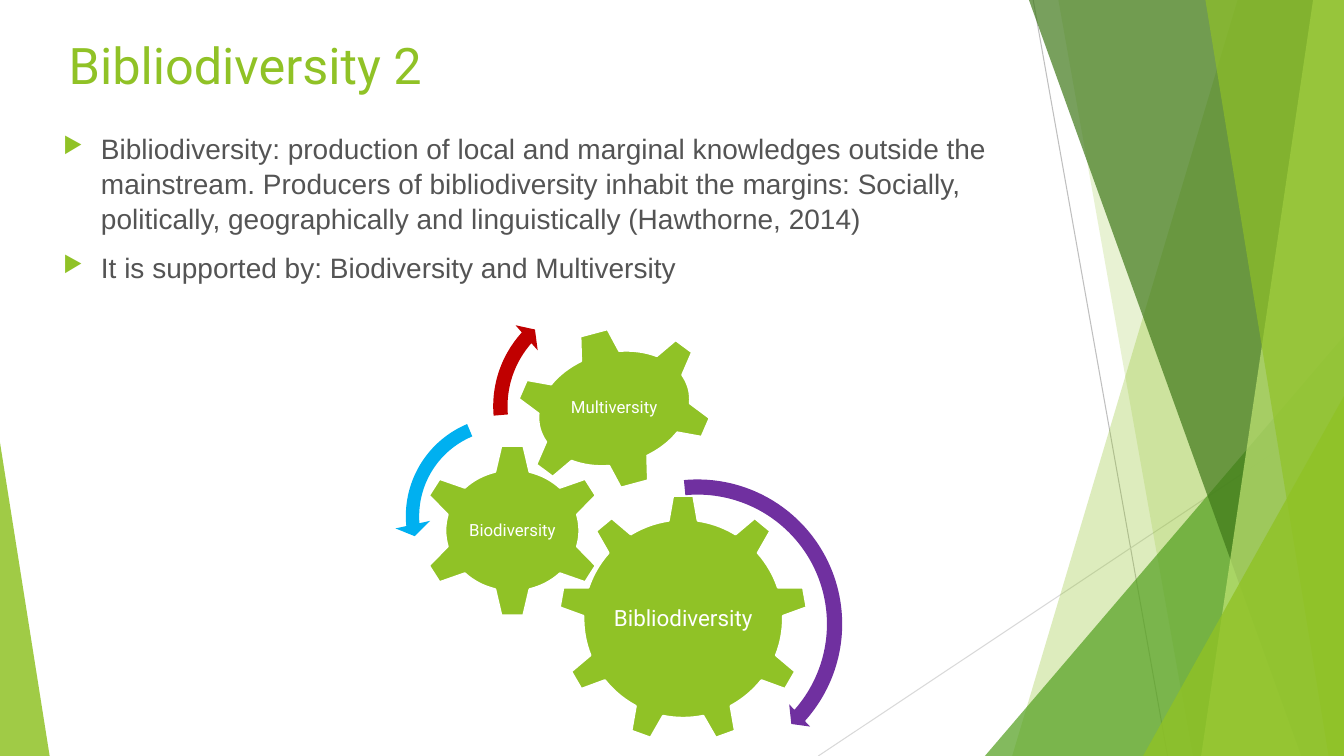
from collections import namedtuple
from dataclasses import dataclass

from lxml import etree
from pptx import Presentation
from pptx.dml.color import RGBColor
from pptx.enum.shapes import MSO_CONNECTOR, MSO_SHAPE
from pptx.enum.text import MSO_ANCHOR, PP_ALIGN
from pptx.oxml.ns import qn
from pptx.util import Pt

STRAIGHT = MSO_CONNECTOR.STRAIGHT
TRIANGLE = MSO_SHAPE.ISOSCELES_TRIANGLE
GEAR_SIX, GEAR_NINE = MSO_SHAPE.GEAR_6, MSO_SHAPE.GEAR_9
ARC, LEFT_ARC = MSO_SHAPE.CIRCULAR_ARROW, MSO_SHAPE.LEFT_CIRCULAR_ARROW
TOP, MIDDLE = MSO_ANCHOR.TOP, MSO_ANCHOR.MIDDLE
LEFT, CENTER = PP_ALIGN.LEFT, PP_ALIGN.CENTER

Box = namedtuple("Box", "left top width height")


@dataclass(frozen=True)
class Theme:
    """Colours, fonts and type sizes of the deck."""
    lime: str = "90C226"
    green: str = "54A021"
    forest: str = "3F7819"
    pale: str = "C0E474"
    white: str = "FFFFFF"
    body: str = "545454"
    dark_rule: str = "BFBFBF"
    light_rule: str = "D9D9D9"
    purple: str = "7030A0"
    blue: str = "00B0F0"
    red: str = "C00000"
    heading_font: str = "Roboto"
    body_font: str = "Arial"
    title_size: int = 36
    body_size: int = 20
    large_label: int = 16
    small_label: int = 12


THEME = Theme()


def points(*lengths):
    """Turn numbers of points into lengths."""
    return [Pt(length) for length in lengths]


def paint(shape, color, opacity=100, outline=None):
    """Give a shape a flat fill, an optional outline and no shadow."""
    shape.shadow.inherit = False
    shape.fill.solid()
    shape.fill.fore_color.rgb = RGBColor.from_string(color)
    if opacity < 100:
        tint = shape.fill._xPr.find(qn("a:solidFill"))[0]
        etree.SubElement(tint, qn("a:alpha")).set("val", str(opacity * 1000))
    if outline:
        shape.line.color.rgb = RGBColor.from_string(outline)
        shape.line.width = Pt(1.5)
    else:
        shape.line.fill.background()


def add_preset(page, kind, box, adjustments=(), **look):
    """Place a painted preset shape."""
    shape = page.shapes.add_shape(kind, *points(*box))
    for index, value in enumerate(adjustments):
        shape.adjustments[index] = value
    paint(shape, **look)
    return shape


def add_bullet(para, color, indent):
    """Give a paragraph a triangular bullet and a hanging indent."""
    properties = para._p.get_or_add_pPr()
    properties.set("marL", str(Pt(indent)))
    properties.set("indent", str(-Pt(indent)))
    tint = etree.SubElement(properties, qn("a:buClr"))
    etree.SubElement(tint, qn("a:srgbClr")).set("val", color)
    etree.SubElement(properties, qn("a:buSzPct")).set("val", "80000")
    etree.SubElement(properties, qn("a:buChar")).set("char", "▶")


def add_text(page, box, text, *, font, size, color, align=LEFT, anchor=TOP,
             insets=(7.2, 3.6), spacing=1.0, before=0, bullet=None):
    """Place text, one paragraph to a line, in a wrapping box."""
    frame = page.shapes.add_textbox(*points(*box)).text_frame
    frame.word_wrap = True
    frame.vertical_anchor = anchor
    frame.margin_left = frame.margin_right = Pt(insets[0])
    frame.margin_top = frame.margin_bottom = Pt(insets[1])
    for index, line in enumerate(text.split("\n")):
        para = frame.add_paragraph() if index else frame.paragraphs[0]
        para.alignment = align
        para.line_spacing = spacing
        para.space_before = Pt(before)
        if bullet:
            add_bullet(para, bullet, 27)
        span = para.add_run()
        span.text = line
        span.font.name = font
        span.font.size = Pt(size)
        span.font.color.rgb = RGBColor.from_string(color)


def add_rule(page, start, end, color):
    """Draw a thin straight line without a shadow."""
    rule = page.shapes.add_connector(STRAIGHT, *points(*start, *end))
    rule.line.color.rgb = RGBColor.from_string(color)
    rule.line.width = Pt(0.75)
    etree.SubElement(rule._element.spPr, qn("a:effectLst"))


def add_facet(page, box, top_x, bottom_x, color, opacity):
    """Fill from a slanted left edge to the right side of the box."""
    right, bottom = box.left + box.width, box.top + box.height
    corners = [(box.left + top_x, box.top), (right, box.top),
               (right, bottom), (box.left + bottom_x, bottom)]
    corners = [tuple(points(*corner)) for corner in corners]
    builder = page.shapes.build_freeform(*corners[0])
    builder.add_line_segments(corners[1:], close=True)
    paint(builder.convert_to_shape(), color, opacity)


def add_corner(page, box, width, height, color, opacity, at_right=True):
    """Set a right triangle in a lower corner of the box."""
    left = box.left + (box.width - width if at_right else 0)
    corner = Box(left, box.top + box.height - height, width, height)
    add_preset(page, TRIANGLE, corner, [int(at_right)], color=color, opacity=opacity)


def add_backdrop(page, box):
    """Draw the layered green facets at the edges of the page."""
    right, bottom = box.left + box.width, box.top + box.height
    add_rule(page, (box.left + 738, box.top), (box.left + 834, bottom), THEME.dark_rule)
    add_rule(page, (right, box.top + 290), (box.left + 584.5, bottom), THEME.light_rule)
    add_facet(page, box, 884, 723, THEME.lime, 30)
    add_facet(page, box, 756, 852, THEME.lime, 20)
    add_corner(page, box, 256.5, 300, THEME.green, 72)
    add_facet(page, box, 735, 929.5, THEME.forest, 70)
    add_facet(page, box, 938, 858, THEME.pale, 70)
    add_facet(page, box, 861, 949, THEME.lime, 65)
    add_corner(page, box, 143.5, 257, THEME.lime, 80)
    add_corner(page, box, 35.5, 224, THEME.lime, 85, at_right=False)


def add_copy(page, box):
    """Write the title and the bulleted statements."""
    add_text(page, (box.left + 4, box.top, 662.5, 60.5), "Bibliodiversity 2",
             font=THEME.heading_font, size=THEME.title_size, color=THEME.lime)
    statements = (
        "Bibliodiversity: production of local and marginal knowledges outside the "
        "mainstream. Producers of bibliodiversity inhabit the margins: Socially, "
        "politically, geographically and linguistically (Hawthorne, 2014)\n"
        "It is supported by: Biodiversity and Multiversity")
    add_text(page, (box.left, box.top + 68.5, box.width, box.height - 68.5), statements,
             font=THEME.body_font, size=THEME.body_size, color=THEME.body,
             spacing=1.04, before=10, bullet=THEME.lime)


def add_gear(page, kind, box, label, size, label_width, rotation=0):
    """Place a gear with a level label across its centre."""
    gear = add_preset(page, kind, box, color=THEME.lime, outline=THEME.white)
    gear.rotation = rotation
    label_box = Box(box.left + (box.width - label_width) / 2, box.top + box.height / 4,
                    label_width, box.height / 2)
    add_text(page, label_box, label, font=THEME.heading_font, size=size,
             color=THEME.white, align=CENTER, anchor=MIDDLE, insets=(1.5, 1.5), spacing=0.9)


def add_gear_train(page, box):
    """Draw three meshing gears and the arrows of their turning."""
    gears = [
        (GEAR_NINE, (119, 148.5, 178, 177), "Bibliodiversity", THEME.large_label, 106.5, 0),
        (GEAR_SIX, (19.5, 112, 133, 124), "Biodiversity", THEME.small_label, 68.5, 0),
        (GEAR_SIX, (86.5, 29.5, 144.5, 114.5), "Multiversity", THEME.small_label, 78, 345),
    ]
    for kind, (left, top, width, height), *label in gears:
        add_gear(page, kind, Box(box.left + left, box.top + top, width, height), *label)
    arrows = [
        (ARC, 109.5, 132, 217.5, (0.05, 2.99, 25.1, 158.76, 0.05), THEME.purple),
        (LEFT_ARC, 2, 84.5, 158.5, (0.06, 4.3, 104.89, 148.38, 0.08), THEME.blue),
        (ARC, 65.5, 0, 170.5, (0.06, 3.94, 133.14, 105.08, 0.07), THEME.red),
    ]
    for kind, left, top, side, bend, color in arrows:
        add_preset(page, kind, (box.left + left, box.top + top, side, side), bend, color=color)


def main():
    """Build the one-page deck and save it."""
    deck = Presentation()
    deck.slide_width, deck.slide_height = points(960, 540)
    page = deck.slides.add_slide(deck.slide_layouts[6])
    add_backdrop(page, Box(0, 0, 960, 540))
    add_copy(page, Box(38, 21, 677, 470))
    add_gear_train(page, Box(280, 205, 327, 350))
    deck.save("out.pptx")


if __name__ == "__main__":
    main()
